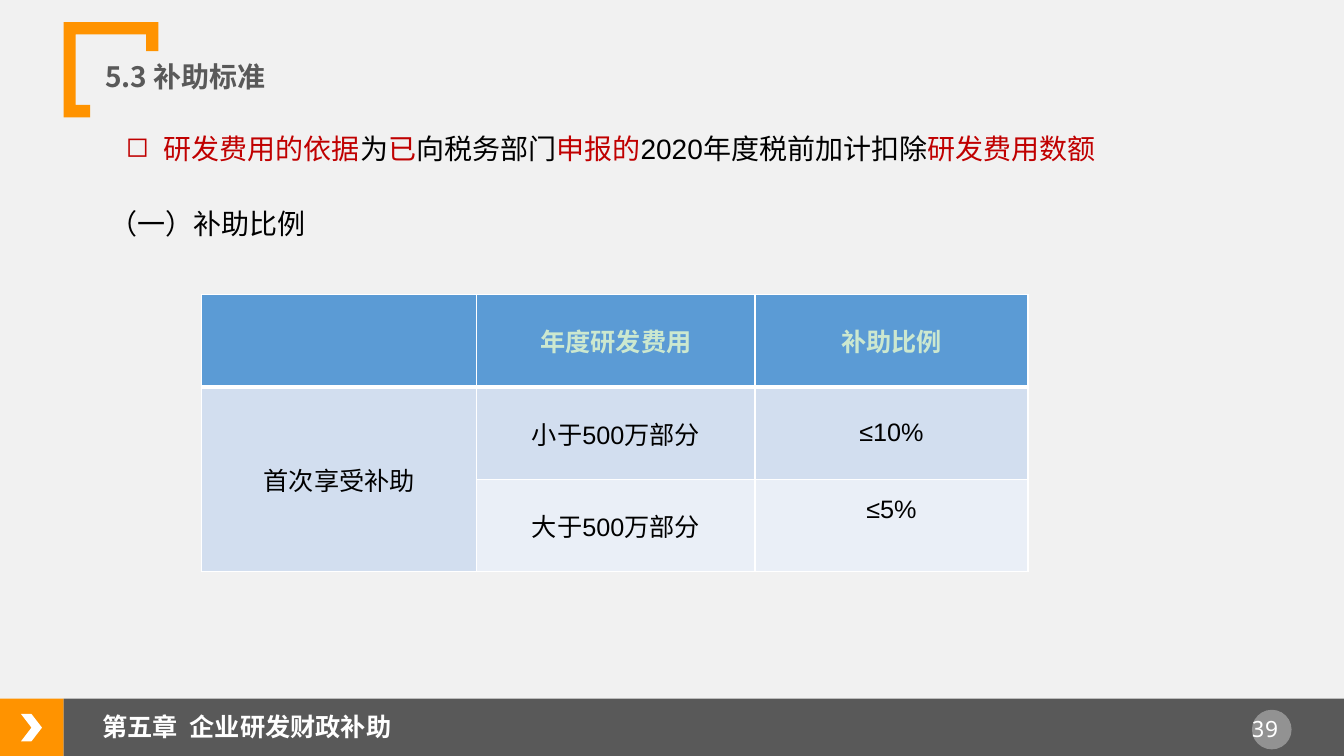
from dataclasses import dataclass

import pptx
import pptx.dml.color
import pptx.enum.shapes
import pptx.enum.text
import pptx.oxml
import pptx.oxml.ns
import pptx.util

Pt = pptx.util.Pt
Preset = pptx.enum.shapes.MSO_SHAPE
Align = pptx.enum.text.PP_ALIGN
Anchor = pptx.enum.text.MSO_ANCHOR
qn = pptx.oxml.ns.qn
NS = pptx.oxml.ns.nsdecls("a")


@dataclass(frozen=True)
class Theme:
    background: str = "F1F1F1"
    orange: str = "FF9300"
    gray: str = "595959"
    white: str = "FFFFFF"
    black: str = "000000"
    red: str = "C00000"
    header: str = "5B9BD5"
    header_text: str = "CCE8CF"
    band_dark: str = "D2DEEF"
    band_light: str = "EAEFF7"
    latin: str = "Arial"
    cjk: str = "Noto Sans CJK SC"
    mono: str = "Noto Sans Mono"
    large: int = 20
    medium: int = 18
    small: int = 16


THEME = Theme()


@dataclass(frozen=True)
class Box:
    left: float
    top: float
    width: float
    height: float

    def lengths(self) -> tuple:
        return tuple(Pt(v) for v in (self.left, self.top, self.width, self.height))


@dataclass(frozen=True)
class Part:
    preset: int
    box: Box
    color: str
    opacity: int = 100


@dataclass(frozen=True)
class Run:
    text: str
    color: str = THEME.black
    size: int = THEME.large
    bold: bool = False
    font: str = THEME.latin


@dataclass(frozen=True)
class Cell:
    row: int
    column: int
    fill: str
    text: str = ""
    bottom_margin: float = 3.6


FOOTER_PARTS = [
    Part(Preset.RECTANGLE, Box(0, 499, 45.5, 41), THEME.orange),
    Part(Preset.RECTANGLE, Box(45.5, 499, 914.5, 41), THEME.gray),
    Part(Preset.CHEVRON, Box(15, 510, 15, 19.5), THEME.white),
    Part(Preset.OVAL, Box(894.3, 507, 28.3, 28.3), THEME.white, 35),
]
BRACKET = [(45.5, 15.8), (113.2, 15.8), (113.2, 36.5), (104.4, 36.5), (104.4, 24.6),
           (54, 24.6), (54, 75), (64.5, 75), (64.5, 83.9), (45.5, 83.9)]
BASIS = [
    Run("研发费用的依据", THEME.red), Run("为"), Run("已", THEME.red), Run("向税务部门"),
    Run("申报的", THEME.red), Run("2020年度税前加计扣除"), Run("研发费用数额", THEME.red),
]
RATE_CELLS = [
    Cell(0, 0, THEME.header),
    Cell(0, 1, THEME.header, "年度研发费用"),
    Cell(0, 2, THEME.header, "补助比例"),
    Cell(1, 0, THEME.band_dark, "首次享受补助"),
    Cell(1, 1, THEME.band_dark, "小于500万部分"),
    Cell(1, 2, THEME.band_dark, "≤10%"),
    Cell(2, 0, THEME.band_dark),
    Cell(2, 1, THEME.band_light, "大于500万部分"),
    Cell(2, 2, THEME.band_light, "≤5%", 26),
]


def rgb(color: str) -> pptx.dml.color.RGBColor:
    return pptx.dml.color.RGBColor.from_string(color)


def apply(target, values: dict) -> None:
    for name, value in values.items():
        setattr(target, name, value)


def paint(shape, color: str, opacity: int = 100) -> None:
    shape.shadow.inherit = False
    shape.line.fill.background()
    shape.fill.solid()
    shape.fill.fore_color.rgb = rgb(color)
    if opacity < 100:
        tint = shape.fill._xPr.find(qn("a:solidFill"))[0]
        tint.append(pptx.oxml.parse_xml(f'<a:alpha {NS} val="{opacity * 1000}"/>'))


def add_part(slide, part: Part) -> None:
    paint(slide.shapes.add_shape(part.preset, *part.box.lengths()), part.color, part.opacity)


def add_bracket(slide) -> None:
    start, *rest = [(Pt(x), Pt(y)) for x, y in BRACKET]
    builder = slide.shapes.build_freeform(*start)
    builder.add_line_segments(rest, close=True)
    paint(builder.convert_to_shape(), THEME.orange)


def write(paragraph, runs: list, **layout) -> None:
    apply(paragraph, layout)
    for item in runs:
        run = paragraph.add_run()
        run.text = item.text
        apply(run.font, {"name": item.font, "size": Pt(item.size), "bold": item.bold})
        run.font.color.rgb = rgb(item.color)
        east_asian = f'<a:ea {NS} typeface="{THEME.cjk}"/>'
        run.font._element.append(pptx.oxml.parse_xml(east_asian))


def indent(paragraph, margin: float, first_line: float = 0) -> None:
    properties = paragraph._p.get_or_add_pPr()
    properties.set("marL", str(Pt(margin)))
    properties.set("indent", str(Pt(first_line)))


def add_text(slide, box: Box, runs: list, **layout):
    frame = slide.shapes.add_textbox(*box.lengths()).text_frame
    frame.word_wrap = True
    write(frame.paragraphs[0], runs, **layout)
    return frame.paragraphs[0]


def set_title(slide) -> None:
    title = slide.shapes.title
    apply(title, dict(zip(("left", "top", "width", "height"),
                          Box(59, 41.8, 828, 41.8).lengths())))
    frame = title.text_frame
    apply(frame, {"vertical_anchor": Anchor.TOP, "word_wrap": True,
                  "auto_size": pptx.enum.text.MSO_AUTO_SIZE.NONE})
    paragraph = frame.paragraphs[0]
    write(paragraph, [Run("5.3 补助标准", THEME.gray, bold=True, font=THEME.cjk)],
          alignment=Align.LEFT, line_spacing=0.9)
    indent(paragraph, 9)


def add_basis(slide) -> None:
    paragraph = add_text(slide, Box(82.8, 90.7, 856.8, 31.7), BASIS)
    indent(paragraph, 27, -27)
    paragraph._p.get_or_add_pPr().append(pptx.oxml.parse_xml(f'<a:buChar {NS} char="◻"/>'))


def set_borders(cell, row: int) -> None:
    properties = cell._tc.get_or_add_tcPr()
    widths = {"L": 1, "R": 1, "T": 3 if row == 1 else 1, "B": 3 if row == 0 else 1}
    for index, (side, width) in enumerate(widths.items()):
        properties.insert(index, pptx.oxml.parse_xml(
            f'<a:ln{side} {NS} w="{Pt(width)}"><a:solidFill>'
            f'<a:srgbClr val="{THEME.white}"/></a:solidFill></a:ln{side}>'))


def add_rates(slide) -> None:
    table = slide.shapes.add_table(3, 3, *Box(144, 210.3, 590.4, 198).lengths()).table
    for column, width in zip(table.columns, (196.6, 198.7, 195.1)):
        column.width = Pt(width)
    for row in table.rows:
        row.height = Pt(66)
    table.cell(1, 0).merge(table.cell(2, 0))
    for item in RATE_CELLS:
        cell = table.cell(item.row, item.column)
        apply(cell, {"vertical_anchor": Anchor.MIDDLE, "margin_bottom": Pt(item.bottom_margin)})
        cell.fill.solid()
        cell.fill.fore_color.rgb = rgb(item.fill)
        set_borders(cell, item.row)
        if item.text:
            is_header = item.row == 0
            color = THEME.header_text if is_header else THEME.black
            write(cell.text_frame.paragraphs[0],
                  [Run(item.text, color, THEME.medium, is_header)], alignment=Align.CENTER)


def main() -> None:
    deck = pptx.Presentation()
    apply(deck, {"slide_width": Pt(960), "slide_height": Pt(540)})
    slide = deck.slides.add_slide(deck.slide_layouts.get_by_name("Title Only"))
    slide.background.fill.solid()
    slide.background.fill.fore_color.rgb = rgb(THEME.background)
    for part in FOOTER_PARTS:
        add_part(slide, part)
    add_bracket(slide)
    set_title(slide)
    add_basis(slide)
    add_text(slide, Box(71.3, 146.9, 879, 300), [Run("（一）补助比例")], line_spacing=0.9)
    add_rates(slide)
    add_text(slide, Box(66.2, 504.7, 300, 28.8),
             [Run("第五章  企业研发财政补助", THEME.white, THEME.medium, True)])
    add_text(slide, Box(878, 507.6, 51, 26.6),
             [Run("39", THEME.white, THEME.small, font=THEME.mono)], alignment=Align.CENTER)
    deck.save("out.pptx")


if __name__ == "__main__":
    main()
